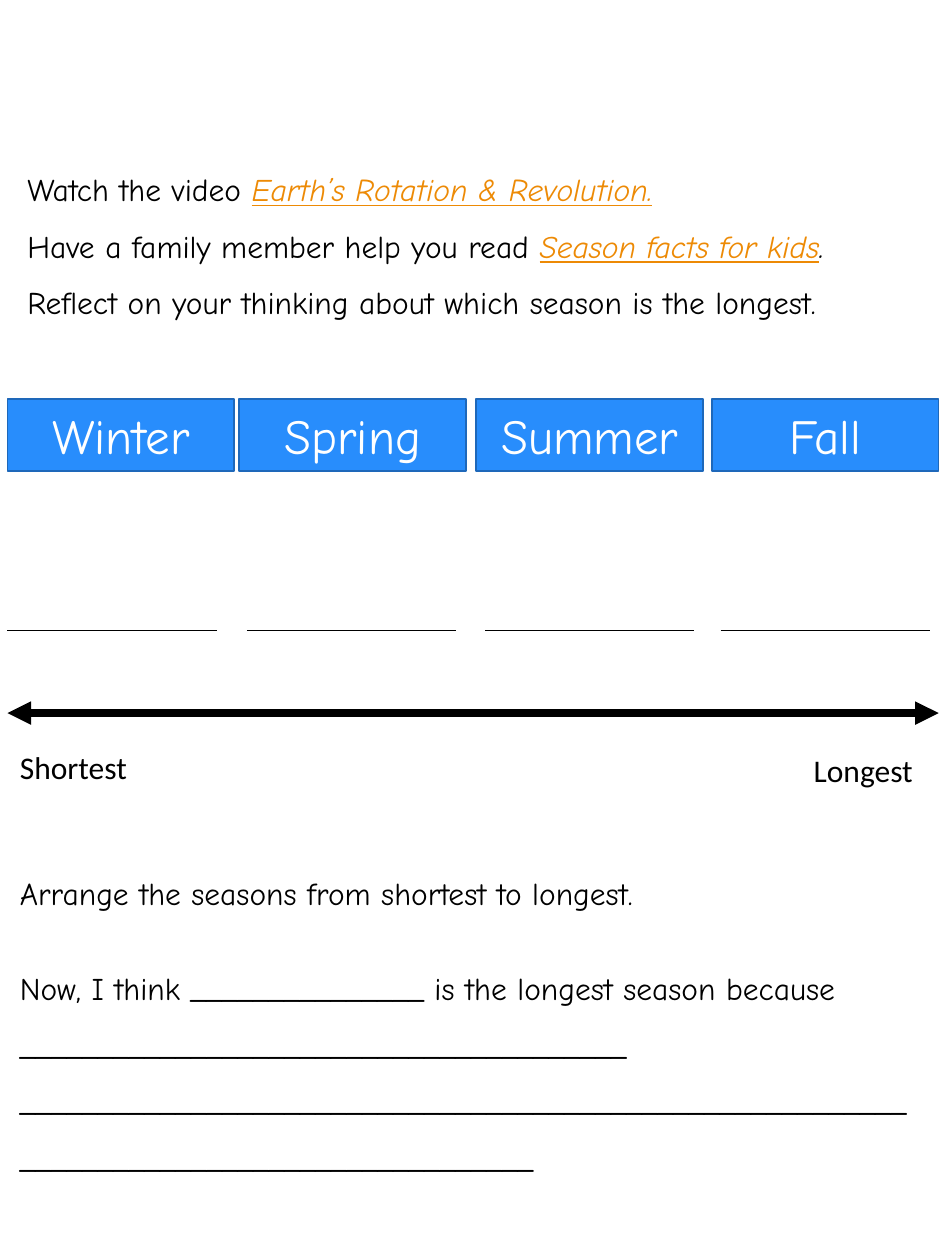
from typing import NamedTuple

import lxml.etree
import pptx
import pptx.dml.color
import pptx.enum.shapes
import pptx.enum.text
import pptx.oxml.ns
import pptx.util

Pt = pptx.util.Pt
COLOURS = {"ink": "000000", "link": "ED8A05", "card": "288DFC",
           "card_edge": "1E68BA", "card_text": "FFFFFF"}
HAND_FONT = "Comic Neue"
LABEL_FONT = "Calibri"
BODY_SIZE = 18


class Season(NamedTuple):
    name: str
    card_left: float
    blank_left: float


class Span(NamedTuple):
    text: str
    colour: str = "ink"
    italic: bool = False
    underline: bool = False


class Line(NamedTuple):
    spans: list[Span]
    spacing: float = 1.5
    space_before: float = 0


class TextBlock(NamedTuple):
    left: float
    top: float
    width: float
    height: float
    font: str
    lines: list[Line]


SEASONS = [
    Season("Winter", 4.3, 4.3),
    Season("Spring", 136.8, 141.1),
    Season("Summer", 272.2, 277.2),
    Season("Fall", 406.8, 411.8),
]

BLOCKS = [
    TextBlock(4.3, 424.1, 105.8, 28.8, LABEL_FONT, [Line([Span("Shortest")], 1)]),
    TextBlock(457.9, 425.5, 105.8, 28.8, LABEL_FONT, [Line([Span("Longest")], 1)]),
    TextBlock(4.3, 496.1, 527, 177.8, HAND_FONT, [
        Line([Span("Arrange the seasons from shortest to longest.")], 1),
        Line([Span("Now, I think " + "_" * 15 + " is the longest season because " + "_" * 39)],
             space_before=21.6),
        Line([Span("_" * 90)]),
    ]),
    TextBlock(8.6, 82.8, 522.7, 101.5, HAND_FONT, [
        Line([Span("Watch the video "),
              Span("Earth’s Rotation & Revolution.", "link", True, True)]),
        Line([Span("Have a family member help you read "),
              Span("Season facts for kids", "link", True, True),
              Span(".", italic=True)]),
        Line([Span("Reflect on your thinking about which season is the longest.")]),
    ]),
]


def rgb(name: str) -> pptx.dml.color.RGBColor:
    return pptx.dml.color.RGBColor.from_string(COLOURS[name])


def style_font(font, face: str, size: float, colour: str) -> None:
    font.name = face
    font.size = Pt(size)
    font.color.rgb = rgb(colour)


def draw_line(page, left: float, right: float, top: float, weight: float,
              arrows: bool = False) -> None:
    line = page.shapes.add_connector(
        pptx.enum.shapes.MSO_CONNECTOR.STRAIGHT, Pt(left), Pt(top), Pt(right), Pt(top))
    line.line.color.rgb = rgb("ink")
    line.line.width = Pt(weight)
    properties = line._element.spPr
    if arrows:
        outline = properties.find(pptx.oxml.ns.qn("a:ln"))
        for end in ("a:headEnd", "a:tailEnd"):
            lxml.etree.SubElement(outline, pptx.oxml.ns.qn(end), type="triangle")
    lxml.etree.SubElement(properties, pptx.oxml.ns.qn("a:effectLst"))


def draw_card(page, season: Season) -> None:
    card = page.shapes.add_shape(
        pptx.enum.shapes.MSO_SHAPE.RECTANGLE,
        Pt(season.card_left), Pt(228.2), Pt(129.6), Pt(41))
    card.shadow.inherit = False
    card.fill.solid()
    card.fill.fore_color.rgb = rgb("card")
    card.line.color.rgb = rgb("card_edge")
    card.line.width = Pt(1)
    card.text_frame.text = season.name
    card.text_frame.vertical_anchor = pptx.enum.text.MSO_ANCHOR.MIDDLE
    para = card.text_frame.paragraphs[0]
    para.alignment = pptx.enum.text.PP_ALIGN.CENTER
    style_font(para.runs[0].font, HAND_FONT, 28, "card_text")


def draw_text(page, block: TextBlock) -> None:
    box = page.shapes.add_textbox(
        Pt(block.left), Pt(block.top), Pt(block.width), Pt(block.height))
    frame = box.text_frame
    frame.word_wrap = True
    frame.auto_size = pptx.enum.text.MSO_AUTO_SIZE.SHAPE_TO_FIT_TEXT
    for index, line in enumerate(block.lines):
        para = frame.add_paragraph() if index else frame.paragraphs[0]
        para.line_spacing = line.spacing
        if line.space_before:
            para.space_before = Pt(line.space_before)
        for span in line.spans:
            run = para.add_run()
            run.text = span.text
            style_font(run.font, block.font, BODY_SIZE, span.colour)
            run.font.italic = span.italic
            run.font.underline = span.underline


def main() -> None:
    deck = pptx.Presentation()
    deck.slide_width, deck.slide_height = Pt(540), Pt(720)
    page = deck.slides.add_slide(deck.slide_layouts[6])
    for season in SEASONS:
        draw_line(page, season.blank_left, season.blank_left + 119.5, 360, 0.5)
        draw_card(page, season)
    draw_line(page, 4.3, 536.4, 407.5, 4.5, arrows=True)
    for block in BLOCKS:
        draw_text(page, block)
    deck.save("out.pptx")


if __name__ == "__main__":
    main()
